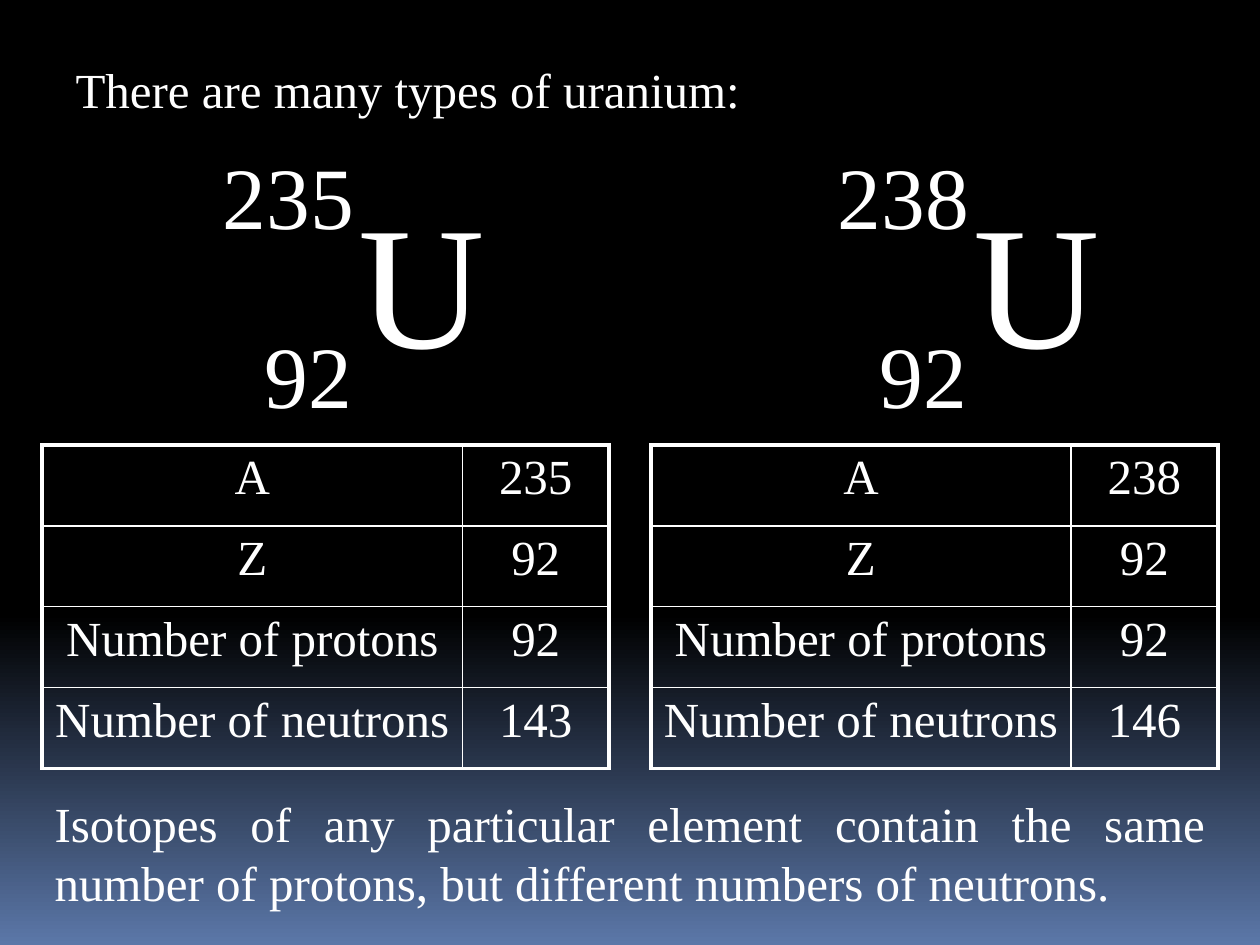
from dataclasses import dataclass

from lxml.etree import SubElement as Sub
from pptx import Presentation
from pptx.dml.color import RGBColor as RGB
from pptx.enum.text import MSO_ANCHOR as Anchor, MSO_AUTO_SIZE as Fit, PP_ALIGN as Align
from pptx.oxml.ns import qn
from pptx.util import Cm, Pt


@dataclass(frozen=True)
class Theme:
    font: str = "Times New Roman"
    ink: str = "FFFFFF"
    dark: str = "000000"
    glow: str = "5B77A8"
    body: int = 28
    index: int = 50
    symbol: int = 100
    thin: float = 1
    thick: float = 2.25


THEME = Theme()
ATOMIC = 92
# Mass number, left of the nuclide, left of the table (cm)
ISOTOPES = [(235, 4.24, 0.85), (238, 16.64, 13.12)]


def style(frame, size, align=Align.LEFT):
    for par in frame.paragraphs:
        par.alignment = align
        for run in par.runs:
            run.font.name = THEME.font
            run.font.size = Pt(size)
            run.font.color.rgb = RGB.from_string(THEME.ink)


def place(shape, box):
    shape.left, shape.top, shape.width, shape.height = map(Cm, box)


def add_text(shapes, text, box, size, align=Align.LEFT, wrap=False):
    frame = shapes.add_textbox(*map(Cm, box)).text_frame
    frame.text = text
    frame.word_wrap = wrap
    frame.auto_size = Fit.SHAPE_TO_FIT_TEXT
    style(frame, size, align)


def set_title(slide, text, box):
    title = slide.shapes.title
    place(title, box)
    frame = title.text_frame
    frame.text = text
    frame.word_wrap = False
    frame.auto_size = Fit.SHAPE_TO_FIT_TEXT
    frame.vertical_anchor = Anchor.TOP
    style(frame, THEME.body)


def paint_back(slide):
    fill = slide.background.fill
    fill.gradient()
    fill.gradient_angle = 270
    stops = [(0.65, THEME.dark), (1, THEME.glow)]
    for stop, (pos, color) in zip(fill.gradient_stops, stops):
        stop.position = pos
        stop.color.rgb = RGB.from_string(color)


def add_nuclide(slide, mass, left):
    shapes = slide.shapes.add_group_shape().shapes
    add_text(shapes, "U", (left + 2.74, 3.38, 3.05, 4.5), THEME.symbol)
    add_text(shapes, str(mass), (left, 2.74, 3.15, 2.36), THEME.index)
    add_text(shapes, str(ATOMIC), (left + 0.84, 6.35, 2.29, 2.36), THEME.index)


def set_edge(cell, side, width):
    props = cell._tc.get_or_add_tcPr()
    line = Sub(props, qn(f"a:ln{side}"), w=str(Pt(width)))
    fill = Sub(line, qn("a:solidFill"))
    Sub(fill, qn("a:srgbClr"), val=THEME.ink)


def add_grid(slide, mass, left):
    rows = [
        ("A", mass),
        ("Z", ATOMIC),
        ("Number of protons", ATOMIC),
        ("Number of neutrons", mass - ATOMIC),
    ]
    widths = [8.47, 2.96]
    high = 1.63
    box = (left, 8.97, sum(widths), high * len(rows))
    table = slide.shapes.add_table(len(rows), len(widths), *map(Cm, box)).table
    table.first_row = table.horz_banding = False
    for col, width in zip(table.columns, widths):
        col.width = Cm(width)
    for r, row in enumerate(rows):
        table.rows[r].height = Cm(high)
        for c, value in enumerate(row):
            cell = table.cell(r, c)
            cell.text_frame.text = str(value)
            style(cell.text_frame, THEME.body, Align.CENTER)
            # Thick lines run only round the outside
            outer = {
                "L": c == 0,
                "R": c == len(widths) - 1,
                "T": r == 0,
                "B": r == len(rows) - 1,
            }
            for side, edge in outer.items():
                set_edge(cell, side, THEME.thick if edge else THEME.thin)
            cell.fill.background()


def main():
    deck = Presentation()
    deck.slide_width, deck.slide_height = Cm(25.4), Cm(19.05)
    slide = deck.slides.add_slide(deck.slide_layouts[5])
    paint_back(slide)

    # Heading
    set_title(slide, "There are many types of uranium:", (1.27, 1.07, 13.92, 1.45))

    # Nuclide symbols with their tables
    for mass, left, edge in ISOTOPES:
        add_nuclide(slide, mass, left)
        add_grid(slide, mass, edge)

    # Conclusion
    add_text(
        slide.shapes,
        "Isotopes of any particular element contain the same number of protons, "
        "but different numbers of neutrons.",
        (0.85, 15.88, 23.7, 2.62),
        THEME.body,
        Align.JUSTIFY,
        wrap=True,
    )
    deck.save("out.pptx")


if __name__ == "__main__":
    main()
